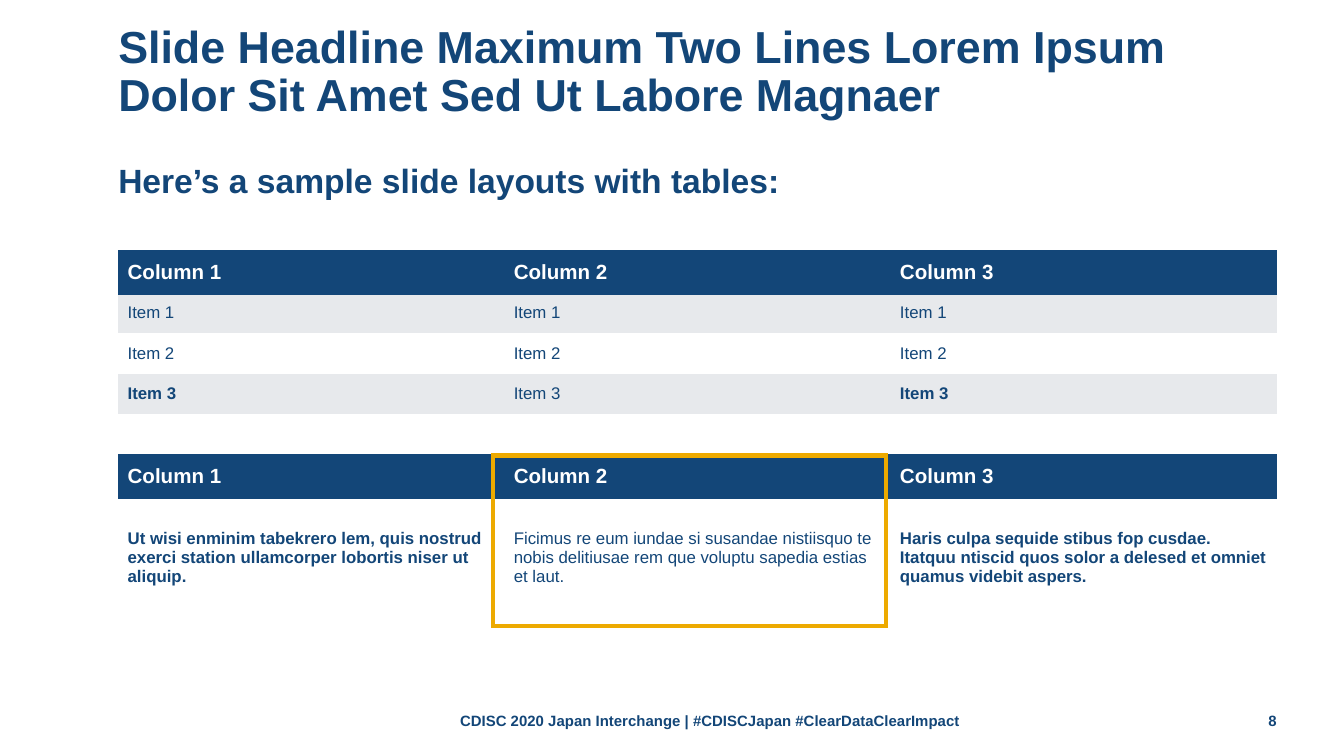
from lxml.etree import SubElement
from pptx import Presentation
from pptx.dml.color import RGBColor
from pptx.enum.shapes import MSO_SHAPE
from pptx.enum.text import MSO_ANCHOR, PP_ALIGN
from pptx.oxml.ns import qn
from pptx.util import Inches, Pt

NAVY, GOLD, GRAY, WHITE = "134678", "EDAA00", "E7E9EC", "FFFFFF"
LEFT, WIDTH = 0.88, 8.62
PLAIN_TABLE_STYLE = "{2D5ABB26-0587-4C30-8999-92F81FD0307C}"


def color(value):
    return RGBColor.from_string(value)


def write(frame, text, size, fill=NAVY, bold=True, align=PP_ALIGN.LEFT,
          anchor=MSO_ANCHOR.MIDDLE, spacing=None, margins=(0, 0)):
    frame.word_wrap = True
    frame.vertical_anchor = anchor
    frame.margin_left = frame.margin_right = Inches(margins[0])
    frame.margin_top = frame.margin_bottom = Inches(margins[1])
    paragraph = frame.paragraphs[0]
    paragraph.alignment = align
    paragraph.line_spacing = spacing
    span = paragraph.add_run()
    span.text = text
    span.font.name = "Arial"
    span.font.size = Pt(size)
    span.font.bold = bold
    span.font.color.rgb = color(fill)


def add_title(page, text):
    title = page.shapes.title
    title.left, title.top = Inches(LEFT), Inches(0)
    title.width, title.height = Inches(WIDTH), Inches(1.09)
    write(title.text_frame, text, 24, spacing=0.9)


def add_text(page, text, left, top, width, height, size, **style):
    box = page.shapes.add_textbox(
        Inches(left), Inches(top), Inches(width), Inches(height))
    write(box.text_frame, text, size, **style)


def add_rule(cell, side):
    """Draw a navy border on one side ("T" or "B") of a cell."""
    properties = cell._tc.get_or_add_tcPr()
    line = SubElement(properties, qn(f"a:ln{side}"), w=str(Pt(2)))
    fill = SubElement(line, qn("a:solidFill"))
    SubElement(fill, qn("a:srgbClr"), val=NAVY)


def add_table(page, rows, top, header_height, row_height, band):
    """Add a table whose last row is bold in its outer columns."""
    columns = len(rows[0])
    height = header_height + row_height * (len(rows) - 1)
    shape = page.shapes.add_table(
        len(rows), columns, Inches(LEFT), Inches(top),
        Inches(WIDTH), Inches(height))
    shape._element.find(f".//{qn('a:tableStyleId')}").text = PLAIN_TABLE_STYLE
    table = shape.table
    for r, row in enumerate(rows):
        header = r == 0
        table.rows[r].height = Inches(header_height if header else row_height)
        for c, text in enumerate(row):
            cell = table.cell(r, c)
            if header:
                add_rule(cell, "T")
                add_rule(cell, "B")
            cell.fill.solid()
            cell.fill.fore_color.rgb = color(
                NAVY if header else band if r % 2 else WHITE)
            cell.vertical_anchor = MSO_ANCHOR.MIDDLE
            cell.margin_left = cell.margin_right = Inches(0.07)
            cell.margin_top = cell.margin_bottom = Inches(0.04)
            outer = c in (0, columns - 1)
            write(cell.text_frame, text, 11 if header else 9,
                  fill=WHITE if header else NAVY,
                  bold=header or (r == len(rows) - 1 and outer),
                  margins=(0.07, 0.04))


def add_frame(page, left, top, width, height):
    frame = page.shapes.add_shape(
        MSO_SHAPE.RECTANGLE, Inches(left), Inches(top),
        Inches(width), Inches(height))
    frame.shadow.inherit = False
    frame.fill.background()
    frame.line.color.rgb = color(GOLD)
    frame.line.width = Pt(2.25)
    SubElement(frame.line._get_or_add_ln(), qn("a:miter"), lim="800000")


def main():
    deck = Presentation()
    deck.slide_width = Inches(10)
    deck.slide_height = deck.slide_width * 9 // 16
    page = deck.slides.add_slide(deck.slide_layouts[5])

    add_title(page, "Slide Headline Maximum Two Lines Lorem Ipsum "
                    "Dolor Sit Amet Sed Ut Labore Magnaer")
    add_text(page, "Here’s a sample slide layouts with tables:",
             LEFT, 1.22, WIDTH, 3.85, 18, anchor=MSO_ANCHOR.TOP, spacing=0.9)
    add_text(page, "8", 9.17, 5.21, 0.33, 0.3, 8, align=PP_ALIGN.RIGHT)

    headings = [f"Column {n}" for n in (1, 2, 3)]
    items = [[f"Item {n}"] * 3 for n in (1, 2, 3)]
    add_table(page, [headings, *items], 1.87, 0.31, 0.3, GRAY)
    details = [
        "Ut wisi enminim tabekrero lem, quis nostrud exerci station "
        "ullamcorper lobortis niser ut aliquip.",
        "Ficimus re eum iundae si susandae nistiisquo te nobis delitiusae "
        "rem que voluptu sapedia estias et laut.",
        "Haris culpa sequide stibus fop cusdae. Itatquu ntiscid quos solor "
        "a delesed et omniet quamus videbit aspers.",
    ]
    add_table(page, [headings, details], 3.39, 0.31, 0.9, WHITE)
    add_frame(page, 3.67, 3.39, 2.92, 1.27)

    add_text(page, "CDISC 2020 Japan Interchange | "
                   "#CDISCJapan #ClearDataClearImpact",
             2.73, 5.21, 5.11, 0.3, 8, align=PP_ALIGN.CENTER)
    deck.save("out.pptx")


if __name__ == "__main__":
    main()
